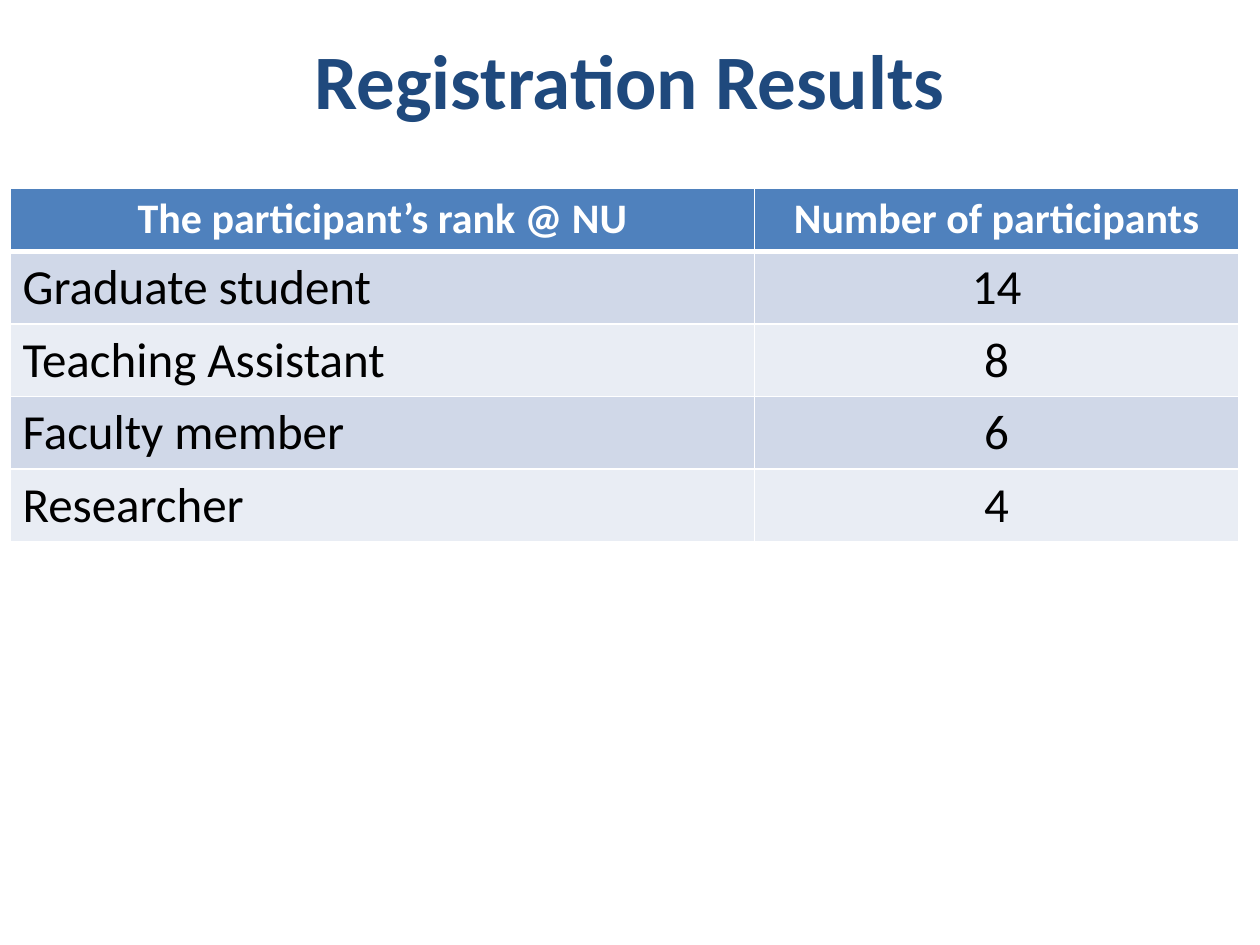
from lxml import etree
from pptx import Presentation
from pptx.dml.color import RGBColor
from pptx.enum import text
from pptx.oxml import ns
from pptx.util import Inches, Pt


def add_span(para, words, size, color, bold=False):
    span = para.add_run()
    span.text = words
    span.font.name = "Calibri"
    span.font.size = Pt(size)
    span.font.bold = bold
    span.font.color.rgb = RGBColor.from_string(color)


def set_borders(cell, widths, color):
    """Draw the cell's edges; widths maps lnL, lnR, lnT and lnB to points."""
    properties = cell._tc.get_or_add_tcPr()
    for index, (edge, width) in enumerate(widths.items()):
        line = etree.Element(ns.qn(f"a:{edge}"), w=str(Pt(width)))
        fill = etree.SubElement(line, ns.qn("a:solidFill"))
        etree.SubElement(fill, ns.qn("a:srgbClr"), val=color)
        properties.insert(index, line)  # edges come before the cell fill


deck = Presentation()
deck.slide_width, deck.slide_height = Inches(10), Inches(7.5)
page = deck.slides.add_slide(deck.slide_layouts[5])

title = page.shapes.title
title.left, title.top = Inches(0.5), Inches(0)
title.width, title.height = Inches(9), Inches(1.25)
title.text_frame.vertical_anchor = text.MSO_ANCHOR.MIDDLE
title_para = title.text_frame.paragraphs[0]
title_para.alignment = text.PP_ALIGN.CENTER
add_span(title_para, "Registration Results", 44, "1F497D", bold=True)

results = [
    ("The participant’s rank @ NU", "Number of participants"),
    ("Graduate student", "14"),
    ("Teaching Assistant", "8"),
    ("Faculty member", "6"),
    ("Researcher", "4"),
]
frame = page.shapes.add_table(len(results), 2, Inches(0.08), Inches(1.49),
                              Inches(9.75), Inches(2.77))
table = frame.table
for column, width in zip(table.columns, (5.91, 3.84)):
    column.width = Inches(width)

for r, values in enumerate(results):
    header = r == 0
    table.rows[r].height = Inches(0.49 if header else 0.57)
    fill = "4F81BD" if header else ("E9EDF4", "D0D8E8")[r % 2]
    widths = {"lnL": 1, "lnR": 1, "lnT": 3 if r == 1 else 1, "lnB": 3 if header else 1}
    for c, value in enumerate(values):
        cell = table.cell(r, c)
        cell.fill.solid()
        cell.fill.fore_color.rgb = RGBColor.from_string(fill)
        set_borders(cell, widths, "FFFFFF")
        para = cell.text_frame.paragraphs[0]
        centred = header or c == 1
        para.alignment = text.PP_ALIGN.CENTER if centred else text.PP_ALIGN.LEFT
        add_span(para, value, 24 if header else 28,
                 "FFFFFF" if header else "000000", bold=header)

deck.save("out.pptx")
